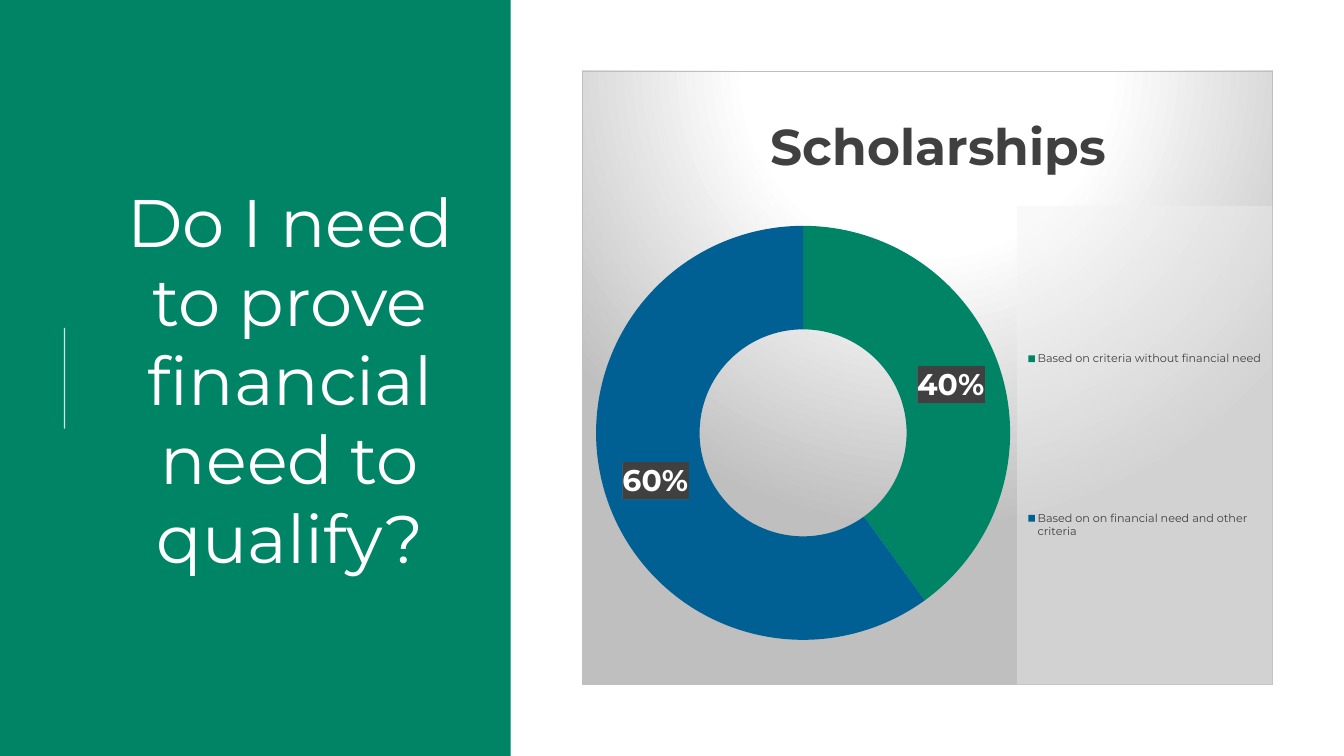
"""Build a slide that asks about financial need beside a doughnut chart."""
from lxml.etree import SubElement
from pptx import Presentation
from pptx.chart.data import CategoryChartData
from pptx.dml.color import RGBColor
from pptx.enum.chart import XL_CHART_TYPE, XL_LEGEND_POSITION
from pptx.enum.shapes import MSO_CONNECTOR, MSO_SHAPE
from pptx.enum.text import MSO_ANCHOR, MSO_AUTO_SIZE, PP_ALIGN
from pptx.oxml import parse_xml
from pptx.oxml.ns import nsdecls, qn
from pptx.util import Inches, Pt

WIDTH, HEIGHT = 20, 11.25
FONT = "Montserrat"
COLORS = {
    "green": "008466",
    "blue": "006093",
    "white": "FFFFFF",
    "dark": "404040",
    "stripe": "595959",
    "grey": "BFBFBF",
    "pale": "F2F2F2",
}
SHARES = {
    "Based on criteria without financial need": (40, "green"),
    "Based on on financial need and other criteria": (60, "blue"),
}


def rgb(name):
    """Return the named colour."""
    return RGBColor.from_string(COLORS[name])


def solid(name, opacity=100):
    """Return the XML of a solid fill."""
    return (f'<a:solidFill><a:srgbClr val="{COLORS[name]}">'
            f'<a:alpha val="{opacity * 1000}"/></a:srgbClr></a:solidFill>')


def style_font(font, size, color, bold=False):
    """Format a font."""
    font.name, font.size, font.bold = FONT, Pt(size), bold
    font.color.rgb = rgb(color)


def write(frame, text, size, color, bold=False, align=PP_ALIGN.CENTER, spacing=None):
    """Put one formatted paragraph in a text frame."""
    paragraph = frame.paragraphs[0]
    paragraph.alignment, paragraph.line_spacing = align, spacing
    run = paragraph.add_run()
    run.text = text
    style_font(run.font, size, color, bold)


def add_panel(slide, width, color):
    """Add a full-height panel at the left edge."""
    panel = slide.shapes.add_shape(
        MSO_SHAPE.RECTANGLE, 0, 0, Inches(width), Inches(HEIGHT))
    panel.shadow.inherit = False
    panel.fill.solid()
    panel.fill.fore_color.rgb = rgb(color)
    panel.line.fill.background()
    return panel


def place_question(slide, panel, text):
    """Place the title in front of the panel."""
    question = slide.shapes.title
    question.left, question.top = Inches(1.55), Inches(1.17)
    question.width, question.height = Inches(5.53), Inches(9.03)
    frame = question.text_frame
    frame.word_wrap, frame.auto_size = True, MSO_AUTO_SIZE.NONE
    frame.vertical_anchor = MSO_ANCHOR.MIDDLE
    write(frame, text, 72, "white", spacing=0.98)
    panel._element.addnext(question._element)


def add_accent(slide, x, top, bottom):
    """Add a thin, slightly transparent vertical line."""
    accent = slide.shapes.add_connector(
        MSO_CONNECTOR.STRAIGHT, Inches(x), Inches(bottom), Inches(x), Inches(top))
    accent.line.width = Pt(1.5)
    accent.line.color.rgb = rgb("white")
    tint = accent._element.spPr.find(".//" + qn("a:srgbClr"))
    SubElement(tint, qn("a:alpha"), val="80000")
    SubElement(accent._element.spPr, qn("a:effectLst"))


def set_area(part, fill, line="<a:ln><a:noFill/></a:ln>"):
    """Give a chart part a fill and a border."""
    part.find(qn("c:txPr")).addprevious(parse_xml(
        f'<c:spPr {nsdecls("c", "a")}>{fill}{line}</c:spPr>'))


def set_layout(part, target=None, **shares):
    """Place a chart part by shares of the chart's size."""
    old = part.find(qn("c:layout"))
    if old is not None:
        part.remove(old)
    inner = f'<c:layoutTarget val="{target}"/>' if target else ""
    modes = "".join(f'<c:{axis}Mode val="edge"/>' for axis in "xy")
    values = "".join(f'<c:{key} val="{share}"/>' for key, share in shares.items())
    layout = parse_xml(f'<c:layout {nsdecls("c")}><c:manualLayout>'
                       f'{inner}{modes}{values}</c:manualLayout></c:layout>')
    overlay = part.find(qn("c:overlay"))
    if overlay is None:
        part.insert(0, layout)
    else:
        overlay.addprevious(layout)


def format_backdrop(chart):
    """Give the whole chart a radial gradient and a thin border."""
    stops = "".join(
        f'<a:gs pos="{place * 1000}"><a:srgbClr val="{COLORS[name]}"/></a:gs>'
        for place, name in ((0, "white"), (39, "white"), (100, "grey")))
    gradient = (f'<a:gradFill><a:gsLst>{stops}</a:gsLst><a:path path="circle">'
                '<a:fillToRect l="50000" t="-80000" r="50000" b="180000"/>'
                '</a:path></a:gradFill>')
    chart.font.name, chart.font.size = "Calibri", Pt(10)
    set_area(chart._chartSpace, gradient, f'<a:ln w="9525">{solid("grey")}</a:ln>')


def format_ring(chart):
    """Colour the slices and label them with percentages."""
    ring = chart.plots[0]
    ring.vary_by_categories = True
    series = ring.series[0]
    for index, (_, color) in enumerate(SHARES.values()):
        part = series.points[index].format
        part.fill.solid()
        part.fill.fore_color.rgb = rgb(color)
        part.line.fill.background()
    labels = series.data_labels
    labels.show_percentage, labels.show_value = True, False
    labels.number_format, labels.number_format_is_linked = "0%", False
    style_font(labels.font, 32, "white", bold=True)
    stripes = "".join(
        f'<a:{key}><a:srgbClr val="{COLORS[name]}"/></a:{key}>'
        for key, name in (("fgClr", "dark"), ("bgClr", "stripe")))
    set_area(labels._element, f'<a:pattFill prst="dkVert">{stripes}</a:pattFill>')
    ring._element.find(qn("c:holeSize")).set("val", "50")
    set_layout(chart._chartSpace.chart.plotArea, "inner", x=0.02, y=0.25, w=0.6, h=0.68)


def format_legend(chart):
    """Add a translucent legend at the right."""
    chart.has_legend = True
    legend = chart.legend
    legend.position, legend.include_in_layout = XL_LEGEND_POSITION.RIGHT, False
    style_font(legend.font, 12, "dark")
    set_area(legend._element, solid("pale", 39))
    set_layout(legend._element, x=0.63, y=0.22, w=0.37, h=0.78)


def add_scholarship_chart(slide, name):
    """Add the doughnut chart with its title and legend."""
    data = CategoryChartData()
    data.categories = list(SHARES)
    data.add_series(name, [value for value, _ in SHARES.values()])
    chart = slide.shapes.add_chart(
        XL_CHART_TYPE.DOUGHNUT, Inches(8.66), Inches(1.05),
        Inches(10.28), Inches(9.14), data).chart
    format_backdrop(chart)
    chart.has_title = True
    write(chart.chart_title.text_frame, name, 54, "dark", bold=True)
    set_layout(chart.chart_title._element, x=0.26, y=0.05)
    format_ring(chart)
    format_legend(chart)


def main():
    """Build and save the slide."""
    deck = Presentation()
    deck.slide_width, deck.slide_height = Inches(WIDTH), Inches(HEIGHT)
    slide = deck.slides.add_slide(deck.slide_layouts[5])
    panel = add_panel(slide, 0.38 * WIDTH, "green")
    place_question(slide, panel, "Do I need to prove financial need to qualify?")
    add_accent(slide, 0.96, 4.88, 6.38)
    add_scholarship_chart(slide, "Scholarships")
    deck.save("out.pptx")


if __name__ == "__main__":
    main()
